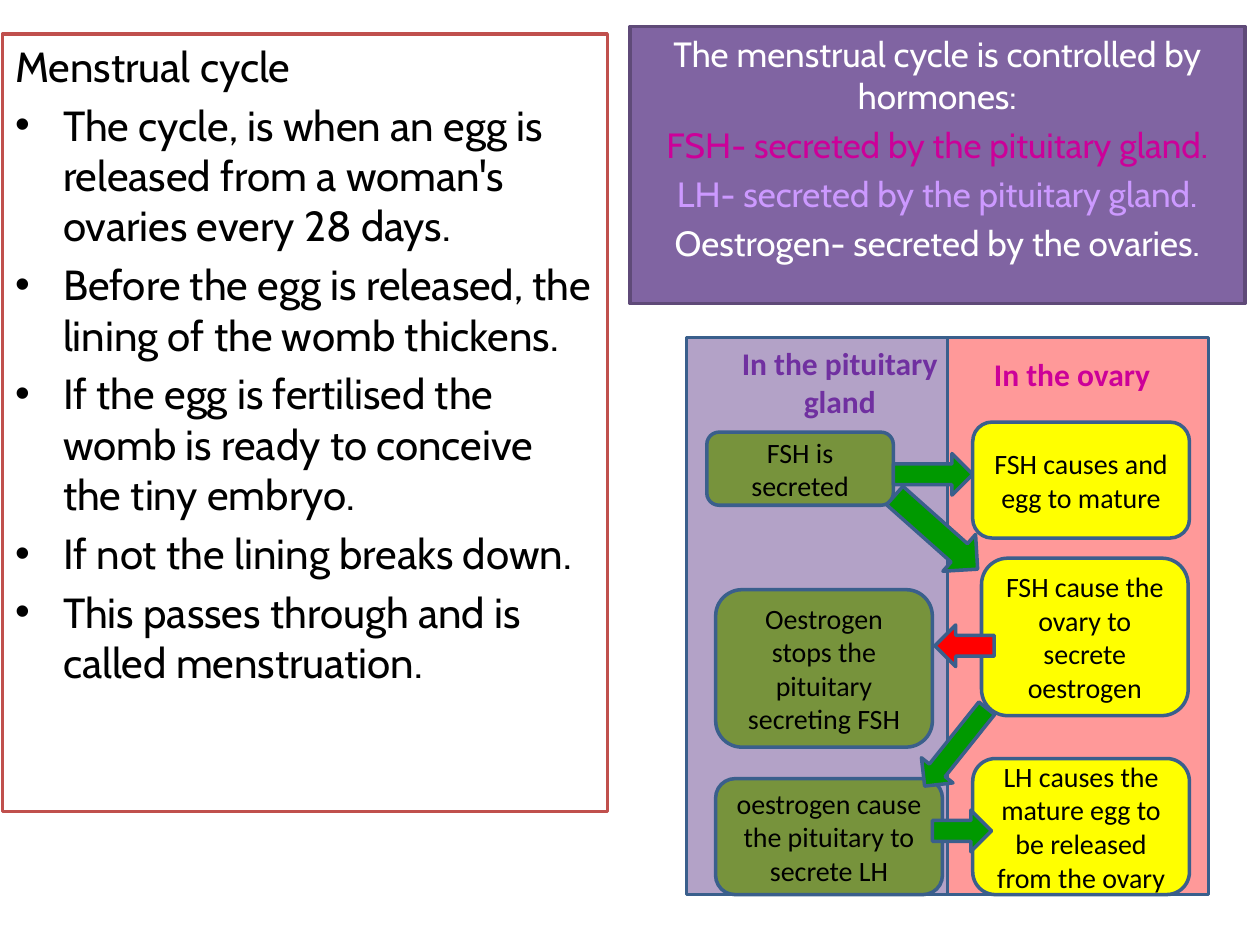
from dataclasses import dataclass

from pptx import Presentation
from pptx.dml.color import RGBColor
from pptx.enum.shapes import MSO_SHAPE as Shape
from pptx.enum.text import MSO_ANCHOR as Anchor, MSO_AUTO_SIZE as AutoSize, PP_ALIGN as Align
from pptx.oxml.xmlchemy import OxmlElement
from pptx.util import Inches, Pt

COLORS = {
    "white": "FFFFFF", "black": "000000", "red_line": "C0504D",
    "purple": "8064A2", "purple_line": "5F4A78", "magenta": "CC0099",
    "lilac": "CC99FF", "pituitary": "B3A2C7", "ovary": "FF9999",
    "outline": "3A5F8C", "olive": "77933C", "yellow": "FFFF00",
    "green": "009900", "red": "FF0000", "violet": "7030A0",
}


@dataclass(frozen=True)
class Box:
    left: float
    top: float
    width: float
    height: float


@dataclass(frozen=True)
class Step:
    box: Box
    fill: str
    text: str


@dataclass(frozen=True)
class Arrow:
    box: Box
    fill: str = "green"
    rotation: float = 0


@dataclass(frozen=True)
class Heading:
    box: Box
    text: str
    color: str
    align: Align


CYCLE_TITLE = "Menstrual cycle"
CYCLE_POINTS = [
    "The cycle, is when an egg is released from a woman's ovaries every 28 days.",
    "Before the egg is released, the lining of the womb thickens.",
    "If the egg is fertilised the womb is ready to conceive the tiny embryo.",
    "If not the lining breaks down.",
    "This passes through and is called menstruation.",
]
HORMONES = [
    ("The menstrual cycle is controlled by hormones:", "white"),
    ("FSH- secreted by the pituitary gland.", "magenta"),
    ("LH- secreted by the pituitary gland.", "lilac"),
    ("Oestrogen- secreted by the ovaries.", "white"),
]
PANELS = [
    (Box(5.45, 2.68, 2.07, 4.42), "pituitary"),
    (Box(7.52, 2.68, 2.07, 4.42), "ovary"),
]
STEPS = [
    Step(Box(5.61, 3.43, 1.48, 0.58), "olive", "FSH is secreted"),
    Step(Box(7.72, 3.35, 1.72, 0.92), "yellow", "FSH causes and egg to mature"),
    Step(Box(7.79, 4.43, 1.64, 1.25), "yellow", "FSH cause the ovary to secrete oestrogen"),
    Step(Box(5.68, 4.68, 1.72, 1.25), "olive", "Oestrogen stops the pituitary secreting FSH"),
    Step(Box(5.68, 6.18, 1.8, 0.92), "olive", "oestrogen cause the pituitary to secrete LH"),
    Step(Box(7.72, 6.02, 1.72, 1.08), "yellow", "LH causes the mature egg to be released from the ovary"),
]
ARROWS = [
    Arrow(Box(7.09, 3.6, 0.63, 0.33)),
    Arrow(Box(6.99, 4.03, 0.88, 0.39), rotation=41.6),
    Arrow(Box(7.42, 4.96, 0.47, 0.33), "red", 180),
    Arrow(Box(7.19, 5.77, 0.79, 0.32), rotation=128.6),
    Arrow(Box(7.4, 6.43, 0.47, 0.33)),
]
HEADINGS = [
    Heading(Box(5.61, 2.68, 2.11, 0.71), "In the pituitary gland", "violet", Align.CENTER),
    Heading(Box(7.79, 2.77, 1.72, 0.4), "In the ovary", "magenta", Align.LEFT),
]


def rgb(name: str) -> RGBColor:
    return RGBColor.from_string(COLORS[name])


def lengths(box: Box) -> tuple:
    return tuple(Inches(v) for v in (box.left, box.top, box.width, box.height))


def paint(sp, fill: str, line: str) -> None:
    sp.fill.solid()
    sp.fill.fore_color.rgb = rgb(fill)
    sp.line.color.rgb = rgb(line)
    sp.line.width = Pt(2)


def write(p, text: str, font: str, size: int, color: str, bold: bool = False) -> None:
    p.text = text
    p.font.name = font
    p.font.size = Pt(size)
    p.font.bold = bold
    p.font.color.rgb = rgb(color)


def set_indent(p, margin: float, hanging: float, bullet: bool) -> None:
    pPr = p._p.get_or_add_pPr()
    pPr.set("marL", str(Inches(margin)))
    pPr.set("indent", str(-Inches(hanging)))
    if not bullet:
        pPr.insert_element_before(OxmlElement("a:buNone"), "a:tabLst", "a:defRPr", "a:extLst")


def place_body(sp, box: Box, fill: str, line: str):
    sp.left, sp.top, sp.width, sp.height = lengths(box)
    paint(sp, fill, line)
    tf = sp.text_frame
    tf.auto_size = AutoSize.NONE
    return tf


def next_paragraph(tf, index: int):
    return tf.add_paragraph() if index else tf.paragraphs[0]


def add_shape(group, kind: Shape, box: Box, fill: str):
    sp = group.shapes.add_shape(kind, *lengths(box))
    sp.shadow.inherit = False
    paint(sp, fill, "outline")
    return sp


def add_step(group, step: Step) -> None:
    tf = add_shape(group, Shape.ROUNDED_RECTANGLE, step.box, step.fill).text_frame
    tf.word_wrap = True
    tf.vertical_anchor = Anchor.MIDDLE
    p = tf.paragraphs[0]
    p.alignment = Align.CENTER
    write(p, step.text, "Calibri", 16, "black")


def add_heading(group, heading: Heading) -> None:
    tf = group.shapes.add_textbox(*lengths(heading.box)).text_frame
    tf.word_wrap = True
    tf.auto_size = AutoSize.SHAPE_TO_FIT_TEXT
    p = tf.paragraphs[0]
    p.alignment = heading.align
    write(p, heading.text, "Calibri", 18, heading.color, bold=True)


def main() -> None:
    prs = Presentation()
    prs.slide_width, prs.slide_height = Inches(10), Inches(7.5)
    two_content = prs.slide_layouts[3]
    s = prs.slides.add_slide(two_content)
    title, cycle, hormones = s.placeholders
    title.element.getparent().remove(title.element)

    tf = place_body(cycle, Box(0.02, 0.27, 4.8, 6.17), "white", "red_line")
    for i, text in enumerate([CYCLE_TITLE, *CYCLE_POINTS]):
        p = next_paragraph(tf, i)
        write(p, text, "Cabin", 24, "black")
        set_indent(p, 0.38, 0.38, bullet=i > 0)

    tf = place_body(hormones, Box(5, 0.21, 4.88, 2.2), "purple", "purple_line")
    for i, (text, color) in enumerate(HORMONES):
        p = next_paragraph(tf, i)
        p.alignment = Align.CENTER
        write(p, text, "Cabin", 20, color)
        set_indent(p, 0, 0, bullet=False)

    diagram = s.shapes.add_group_shape()
    for box, fill in PANELS:
        add_shape(diagram, Shape.RECTANGLE, box, fill)
    for step in STEPS:
        add_step(diagram, step)
    for arrow in ARROWS:
        add_shape(diagram, Shape.RIGHT_ARROW, arrow.box, arrow.fill).rotation = arrow.rotation
    for heading in HEADINGS:
        add_heading(diagram, heading)

    prs.save("out.pptx")


if __name__ == "__main__":
    main()
